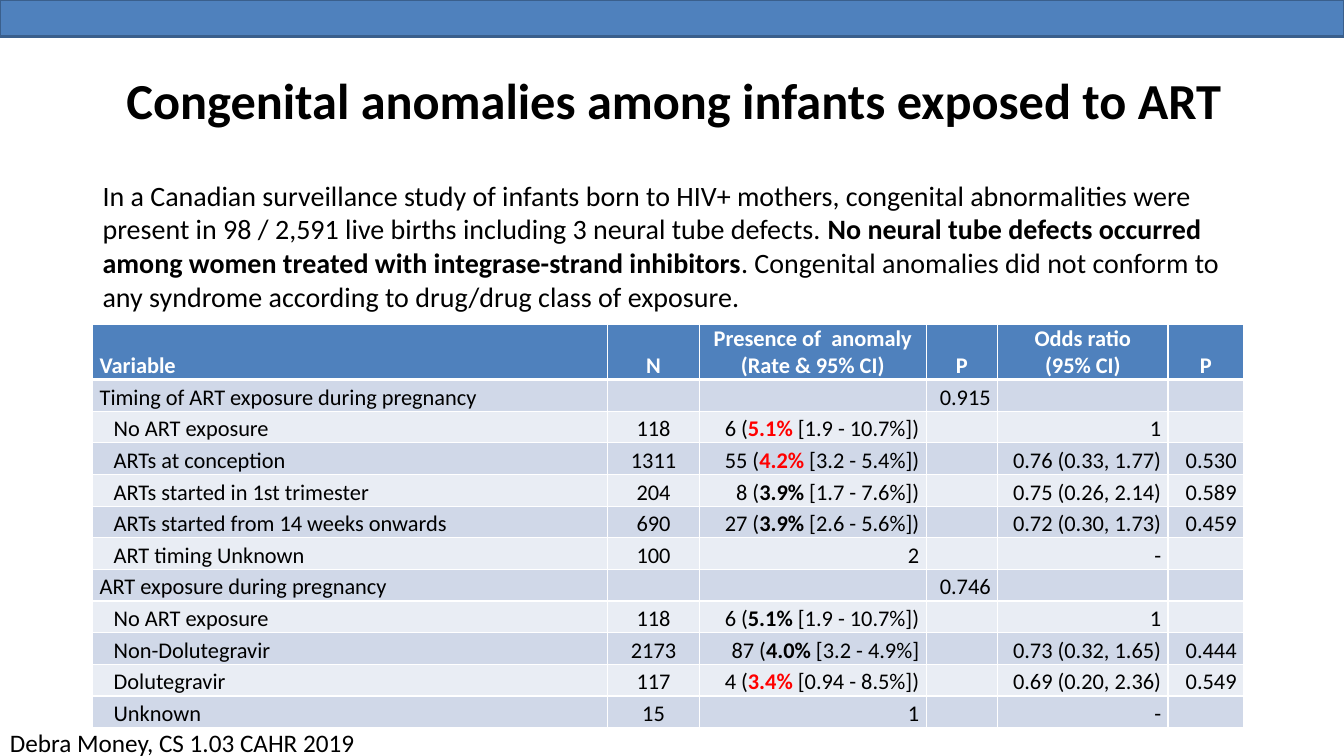
import pptx
import pptx.dml.color
import pptx.enum.shapes
import pptx.enum.text
import pptx.oxml
import pptx.oxml.ns
import pptx.util

Pt = pptx.util.Pt
ALIGN = pptx.enum.text.PP_ALIGN
ANCHOR = pptx.enum.text.MSO_ANCHOR

BLUE, BLACK, WHITE, RED = "4F81BD", "000000", "FFFFFF", "FF0000"
BANDS = ("D0D8E8", "E9EDF4")

COLUMN_WIDTHS = (367.9, 65.5, 162, 51.1, 121.7, 54)
HEADER_HEIGHT, ROW_HEIGHT = 39.4, 22.6
HEADINGS = ("Variable", "N", "Presence of  anomaly (Rate & 95% CI)", "P",
            "Odds ratio\n(95% CI)", "P")
# Asterisks enclose bold text; each group is a heading, its P value and its rows.
GROUPS = (
    ("Timing of ART exposure during pregnancy", "0.915", (
        ("No ART exposure", "118", "6 (*5.1%* [1.9 - 10.7%])", "1", "", RED),
        ("ARTs at conception", "1311", "55 (*4.2%* [3.2 - 5.4%])",
         "0.76 (0.33, 1.77)", "0.530", RED),
        ("ARTs started in 1st trimester", "204", "8 (*3.9% *[1.7 - 7.6%])",
         "0.75 (0.26, 2.14)", "0.589", BLACK),
        ("ARTs started from 14 weeks onwards", "690", "27 (*3.9%* [2.6 - 5.6%])",
         "0.72 (0.30, 1.73)", "0.459", BLACK),
        ("ART timing Unknown", "100", "2", "-", "", BLACK),
    )),
    ("ART exposure during pregnancy", "0.746", (
        ("No ART exposure", "118", "6 (*5.1%* [1.9 - 10.7%])", "1", "", BLACK),
        ("Non-Dolutegravir", "2173", "87 (*4.0%* [3.2 - 4.9%]",
         "0.73 (0.32, 1.65)", "0.444", BLACK),
        ("Dolutegravir", "117", "4 (*3.4%* [0.94 - 8.5%])",
         "0.69 (0.20, 2.36)", "0.549", RED),
        ("Unknown", "15", "1", "-", "", BLACK),
    )),
)


def rgb(hex_color):
    return pptx.dml.color.RGBColor.from_string(hex_color)


def write(p, text, size, color=BLACK, bold=False, accent=None):
    """Add runs to p; parts between asterisks are bold, in the accent colour."""
    for i, part in enumerate(text.split("*")):
        marked = i % 2 == 1
        r = p.add_run()
        r.text = part
        style = {"name": "Calibri", "size": Pt(size), "bold": bold or marked}
        for name, value in style.items():
            setattr(r.font, name, value)
        r.font.color.rgb = rgb(accent if marked and accent else color)


def add_bar(s, x, y, w, h):
    bar = s.shapes.add_shape(pptx.enum.shapes.MSO_SHAPE.RECTANGLE,
                             Pt(x), Pt(y), Pt(w), Pt(h))
    bar.shadow.inherit = False
    bar.fill.solid()
    bar.fill.fore_color.rgb = rgb(BLUE)
    bar.line.color.rgb = rgb("3A5F8C")
    bar.line.width = Pt(2)


def add_text(s, x, y, w, h, text, size, bold=False, align=ALIGN.LEFT,
             anchor=ANCHOR.TOP, wrap=True):
    tf = s.shapes.add_textbox(Pt(x), Pt(y), Pt(w), Pt(h)).text_frame
    tf.word_wrap = wrap
    tf.vertical_anchor = anchor
    p = tf.paragraphs[0]
    p.alignment = align
    write(p, text, size, bold=bold)


def set_borders(cell, bottom=1):
    tcPr = cell._tc.get_or_add_tcPr()
    for side, width in (("L", 1), ("R", 1), ("T", 1), ("B", bottom)):
        tcPr.append(pptx.oxml.parse_xml(
            f'<a:ln{side} {pptx.oxml.ns.nsdecls("a")} w="{Pt(width)}">'
            f'<a:solidFill><a:srgbClr val="{WHITE}"/></a:solidFill></a:ln{side}>'))


def fill_cell(cell, text, fill, align, color=BLACK, bold=False, accent=None,
              indent=0, bottom=1):
    set_borders(cell, bottom)
    cell.fill.solid()
    cell.fill.fore_color.rgb = rgb(fill)
    format_values = {"margin_left": Pt(5), "margin_right": Pt(5), "margin_top": 0,
                     "margin_bottom": 0, "vertical_anchor": ANCHOR.BOTTOM}
    for name, value in format_values.items():
        setattr(cell, name, value)
    if not text:
        return
    tf = cell.text_frame
    for i, line in enumerate(text.split("\n")):
        p = tf.add_paragraph() if i else tf.paragraphs[0]
        p.alignment = align
        if indent:
            p._p.get_or_add_pPr().set("indent", str(Pt(indent)))
        write(p, line, 16, color, bold, accent)


def table_rows():
    """Yield the six texts, accent colour and first-line indent of each body row."""
    for heading, p_value, rows in GROUPS:
        yield (heading, "", "", p_value, "", ""), None, 0
        for label, n, rate, odds, p_odds, accent in rows:
            yield (label, n, rate, "", odds, p_odds), accent, 10


def add_anomaly_table(s, x, y):
    rows = list(table_rows())
    height = HEADER_HEIGHT + len(rows) * ROW_HEIGHT
    table = s.shapes.add_table(len(rows) + 1, len(HEADINGS), Pt(x), Pt(y),
                               Pt(sum(COLUMN_WIDTHS)), Pt(height)).table
    for column, width in zip(table.columns, COLUMN_WIDTHS):
        column.width = Pt(width)
    for i, row in enumerate(table.rows):
        row.height = Pt(ROW_HEIGHT if i else HEADER_HEIGHT)

    for j, heading in enumerate(HEADINGS):
        fill_cell(table.cell(0, j), heading, BLUE, ALIGN.CENTER if j else ALIGN.LEFT,
                  WHITE, bold=True, bottom=3)
    aligns = (ALIGN.LEFT, ALIGN.CENTER) + (ALIGN.RIGHT,) * 4
    for i, (texts, accent, indent) in enumerate(rows):
        for j, (text, align) in enumerate(zip(texts, aligns)):
            fill_cell(table.cell(i + 1, j), text, BANDS[i % 2], align,
                      accent=accent, indent=0 if j else indent)


def build_slide(prs):
    s = prs.slides.add_slide(prs.slide_layouts[6])
    add_bar(s, 0, 0, 960, 26)
    add_text(s, 24.5, 26, 914.4, 90,
             "Congenital anomalies among infants exposed to ART", 36, bold=True,
             align=ALIGN.CENTER, anchor=ANCHOR.MIDDLE)
    add_text(s, 66.2, 123.8, 828, 342.7,
             "In a Canadian surveillance study of infants born to HIV+ mothers, "
             "congenital abnormalities were present in 98 / 2,591 live births "
             "including 3 neural tube defects. *No neural tube defects occurred "
             "among women treated with integrase-strand inhibitors*. Congenital "
             "anomalies did not conform to any syndrome according to drug/drug "
             "class of exposure.", 20)
    add_anomaly_table(s, 66.2, 231.8)
    add_text(s, 0, 516.2, 263.5, 29, "Debra Money, CS 1.03 CAHR 2019", 18, wrap=False)


def main():
    prs = pptx.Presentation()
    prs.slide_width, prs.slide_height = Pt(960), Pt(540)
    build_slide(prs)
    prs.save("out.pptx")


if __name__ == "__main__":
    main()
